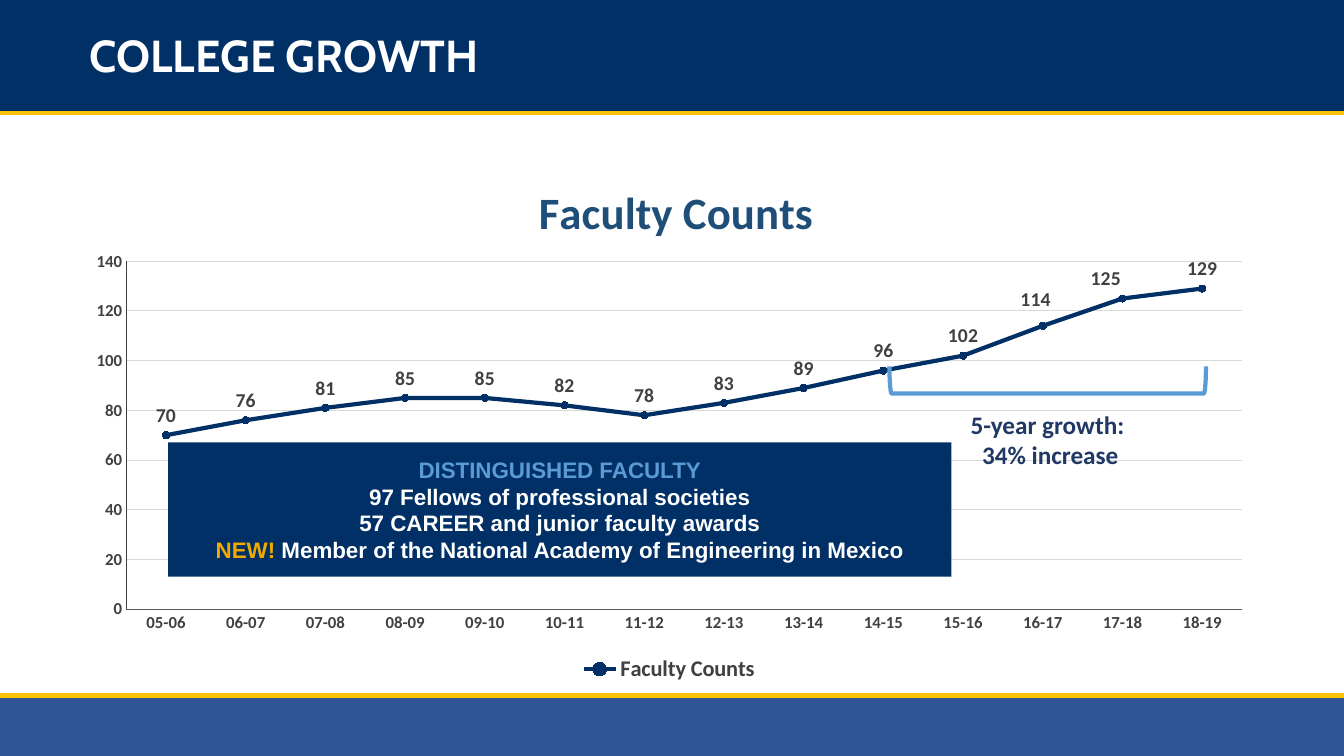
from dataclasses import dataclass

from lxml import etree
from pptx import Presentation
from pptx.chart.data import CategoryChartData
from pptx.dml.color import RGBColor
from pptx.enum.chart import (XL_CHART_TYPE, XL_LABEL_POSITION, XL_LEGEND_POSITION,
                             XL_MARKER_STYLE, XL_TICK_MARK)
from pptx.enum.shapes import MSO_CONNECTOR, MSO_SHAPE
from pptx.enum.text import MSO_ANCHOR, PP_ALIGN
from pptx.oxml.ns import qn
from pptx.util import Pt

RECTANGLE = MSO_SHAPE.RECTANGLE
BRACKET = MSO_SHAPE.LEFT_BRACKET
STRAIGHT = MSO_CONNECTOR.STRAIGHT
MIDDLE = MSO_ANCHOR.MIDDLE
LEFT, CENTER = PP_ALIGN.LEFT, PP_ALIGN.CENTER
ABOVE = XL_LABEL_POSITION.ABOVE
NO_TICK = XL_TICK_MARK.NONE


@dataclass(frozen=True)
class Theme:
    navy: str = "003066"
    footer: str = "2F5597"
    gold: str = "FFC000"
    amber: str = "F1AB00"
    sky: str = "5B9BD5"
    growth: str = "203864"
    chart_title: str = "1F4E79"
    white: str = "FFFFFF"
    text: str = "404040"
    axis: str = "595959"
    grid: str = "D9D9D9"
    heading_font: str = "Cabin"
    chart_font: str = "Calibri"
    box_font: str = "Arial"
    heading_size: int = 32
    growth_size: int = 18
    box_size: int = 16
    label_size: int = 14
    axis_size: int = 12


@dataclass(frozen=True)
class Box:
    left: float
    top: float
    width: float
    height: float

    def lengths(self) -> tuple:
        return Pt(self.left), Pt(self.top), Pt(self.width), Pt(self.height)


@dataclass(frozen=True)
class Span:
    text: str
    color: str


@dataclass(frozen=True)
class Band:
    box: Box
    color: str
    rule_y: float


THEME = Theme()
SLIDE_WIDTH, SLIDE_HEIGHT = 960, 540
BANDS = [
    Band(Box(0, 0, SLIDE_WIDTH, 80), THEME.navy, 80.6),
    Band(Box(0, 496.8, SLIDE_WIDTH, 43.2), THEME.footer, 496.8),
]
FIRST_YEAR = 5
FACULTY = [70, 76, 81, 85, 85, 82, 78, 83, 89, 96, 102, 114, 125, 129]
# Label shifts and areas are fractions of the chart frame
LABEL_SHIFTS = {11: (-0.006, -0.013), 12: (-0.014, 0)}
PLOT_AREA = {"x": 0.045, "y": 0.22, "w": 0.935, "h": 0.637}
DISTINCTIONS = [
    [Span("DISTINGUISHED FACULTY", THEME.sky)],
    [Span("97 Fellows of professional societies", THEME.white)],
    [Span("57 CAREER and junior faculty awards", THEME.white)],
    [Span("NEW! ", THEME.amber),
     Span("Member of the National Academy of Engineering in Mexico", THEME.white)],
]


def style_font(font, name: str, size: float, color: str) -> None:
    font.name, font.size, font.bold = name, Pt(size), True
    font.color.rgb = RGBColor.from_string(color)


def style_line(line, color: str, width: float) -> None:
    line.color.rgb = RGBColor.from_string(color)
    line.width = Pt(width)


def add_rectangle(slide, box: Box, color: str):
    shape = slide.shapes.add_shape(RECTANGLE, *box.lengths())
    shape.shadow.inherit = False
    shape.fill.solid()
    shape.fill.fore_color.rgb = RGBColor.from_string(color)
    shape.line.fill.background()
    return shape


def add_band(slide, band: Band) -> None:
    add_rectangle(slide, band.box, band.color)
    rule = slide.shapes.add_connector(STRAIGHT, 0, Pt(band.rule_y),
                                      Pt(SLIDE_WIDTH), Pt(band.rule_y))
    style_line(rule.line, THEME.gold, 3)
    etree.SubElement(rule.element.spPr, qn("a:effectLst"))


def add_text(slide, box: Box, text: str, font: str, size: float, color: str,
             alignment) -> None:
    text_frame = slide.shapes.add_textbox(*box.lengths()).text_frame
    text_frame.word_wrap = True
    text_frame.vertical_anchor = MIDDLE
    paragraph = text_frame.paragraphs[0]
    paragraph.text = text
    paragraph.alignment = alignment
    paragraph.line_spacing = 0.9 if alignment == LEFT else 1.0
    for run in paragraph.runs:
        style_font(run.font, font, size, color)


def manual_layout(values: dict, modes: dict):
    layout = etree.Element(qn("c:layout"))
    manual = etree.SubElement(layout, qn("c:manualLayout"))
    for tag, value in {**modes, **values}.items():
        etree.SubElement(manual, qn(f"c:{tag}")).set("val", str(value))
    return layout


def place_chart_parts(chart) -> None:
    edges = {"xMode": "edge", "yMode": "edge"}
    plot_area = chart.element.find(".//" + qn("c:plotArea"))
    for layout in plot_area.findall(qn("c:layout")):
        plot_area.remove(layout)
    plot_area.insert(0, manual_layout(PLOT_AREA, {"layoutTarget": "inner", **edges}))
    title = chart.element.find(".//" + qn("c:title"))
    for layout in title.findall(qn("c:layout")):
        title.remove(layout)
    title.find(qn("c:tx")).addnext(manual_layout({"x": 0.384, "y": 0.058}, edges))
    for label in chart.element.iter(qn("c:dLbl")):
        index = label.find(qn("c:idx"))
        x, y = LABEL_SHIFTS[int(index.get("val"))]
        index.addnext(manual_layout({"x": x, "y": y}, {}))


def add_faculty_chart(slide, box: Box) -> None:
    data = CategoryChartData()
    data.categories = [f"{year:02}-{year + 1:02}"
                       for year in range(FIRST_YEAR, FIRST_YEAR + len(FACULTY))]
    data.add_series("Faculty Counts", FACULTY)
    chart = slide.shapes.add_chart(XL_CHART_TYPE.LINE_MARKERS, *box.lengths(), data).chart
    chart.font.name, chart.font.size = THEME.chart_font, Pt(10)

    # Title and legend
    chart.has_title = True
    paragraph = chart.chart_title.text_frame.paragraphs[0]
    paragraph.text = "Faculty Counts"
    style_font(paragraph.runs[0].font, THEME.chart_font, THEME.heading_size,
               THEME.chart_title)
    chart.has_legend = True
    chart.legend.position = XL_LEGEND_POSITION.BOTTOM
    chart.legend.include_in_layout = False
    style_font(chart.legend.font, THEME.chart_font, THEME.box_size, THEME.text)

    # Axes
    for axis, color in ((chart.category_axis, THEME.axis), (chart.value_axis, THEME.text)):
        axis.major_tick_mark = axis.minor_tick_mark = NO_TICK
        style_font(axis.tick_labels.font, THEME.chart_font, THEME.axis_size, THEME.text)
        style_line(axis.format.line, color, 0.75)
    values = chart.value_axis
    values.minimum_scale, values.maximum_scale, values.major_unit = 0, 140, 20
    style_line(values.major_gridlines.format.line, THEME.grid, 0.75)

    # Series and its labels
    chart.plots[0].vary_by_categories = False
    series = chart.plots[0].series[0]
    series.smooth = False
    style_line(series.format.line, THEME.navy, 3)
    marker = series.marker
    marker.style, marker.size = XL_MARKER_STYLE.CIRCLE, 5
    marker.format.fill.solid()
    marker.format.fill.fore_color.rgb = RGBColor.from_string(THEME.navy)
    style_line(marker.format.line, THEME.navy, 0.75)
    labels = series.data_labels
    labels.show_value = True
    for label in [labels] + [series.points[index].data_label for index in LABEL_SHIFTS]:
        style_font(label.font, THEME.chart_font, THEME.label_size, THEME.text)
        label.position = ABOVE
    place_chart_parts(chart)


def add_distinctions(slide, box: Box) -> None:
    text_frame = add_rectangle(slide, box, THEME.navy).text_frame
    text_frame.word_wrap = True
    text_frame.vertical_anchor = MIDDLE
    for number, spans in enumerate(DISTINCTIONS):
        paragraph = text_frame.add_paragraph() if number else text_frame.paragraphs[0]
        paragraph.alignment = CENTER
        for span in spans:
            run = paragraph.add_run()
            run.text = span.text
            style_font(run.font, THEME.box_font, THEME.box_size, span.color)


def add_growth_bracket(slide, box: Box) -> None:
    bracket = slide.shapes.add_shape(BRACKET, *box.lengths())
    bracket.rotation = 270
    bracket.shadow.inherit = False
    bracket.fill.background()
    style_line(bracket.line, THEME.sky, 3)


def main() -> None:
    presentation = Presentation()
    presentation.slide_width, presentation.slide_height = Pt(SLIDE_WIDTH), Pt(SLIDE_HEIGHT)
    slide = presentation.slides.add_slide(presentation.slide_layouts[6])
    for band in BANDS:
        add_band(slide, band)
    add_text(slide, Box(56.9, 13, 669.6, 56.2), "COLLEGE GROWTH", THEME.heading_font,
             THEME.heading_size, THEME.white, LEFT)
    add_faculty_chart(slide, Box(51.8, 100.8, 852.5, 390.2))
    add_growth_bracket(slide, Box(738.7, 158.4, 19.4, 226.1))
    add_text(slide, Box(655.9, 295.2, 188.6, 37.4), "5-year growth: \v34% increase",
             THEME.chart_font, THEME.growth_size, THEME.growth, CENTER)
    add_distinctions(slide, Box(120.2, 316.1, 559.4, 95.8))
    presentation.save("out.pptx")


if __name__ == "__main__":
    main()
